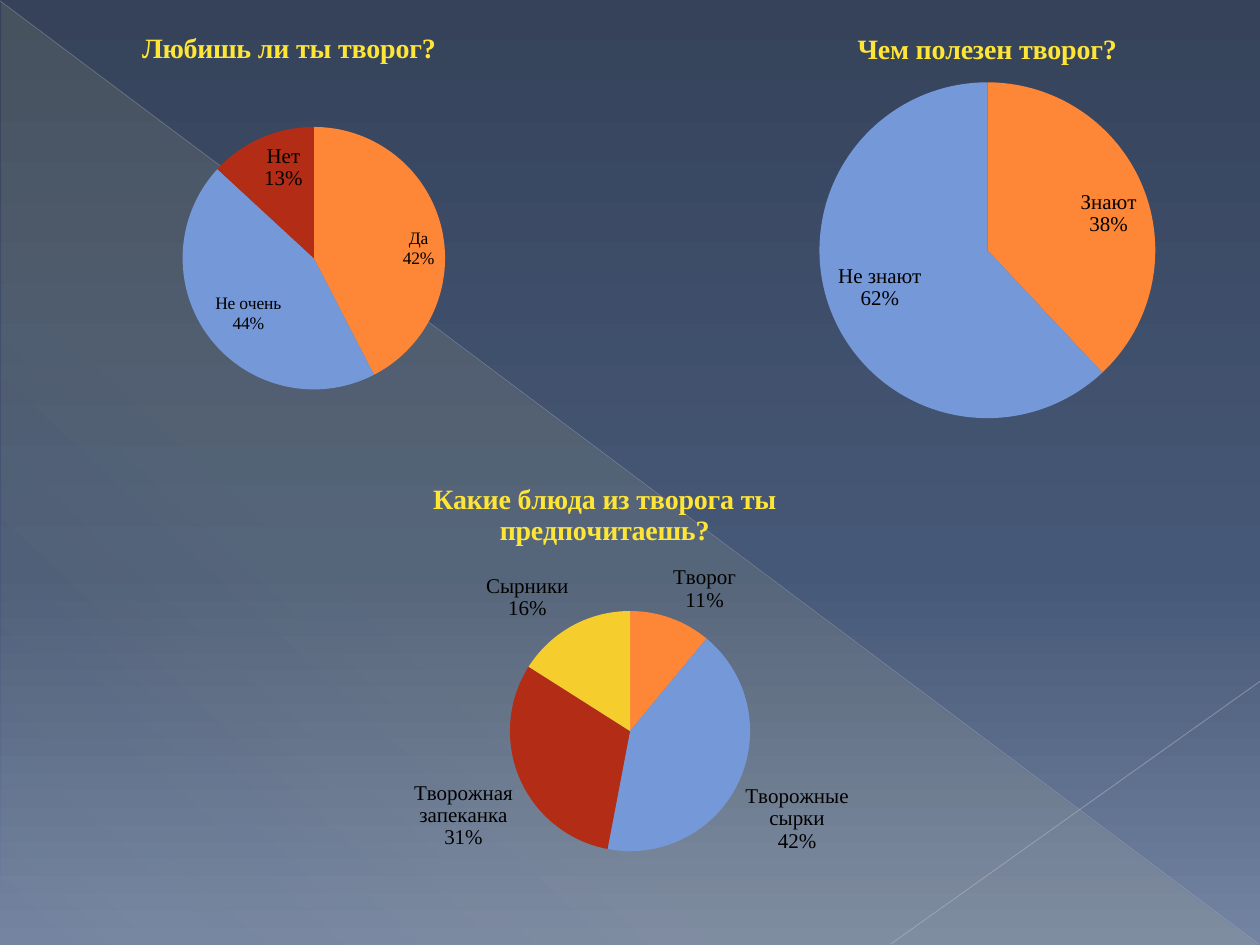
from lxml import etree
from pptx import Presentation
from pptx.chart.data import CategoryChartData
from pptx.dml.color import RGBColor
from pptx.enum.chart import XL_CHART_TYPE, XL_LABEL_POSITION
from pptx.enum.shapes import MSO_CONNECTOR, MSO_SHAPE
from pptx.oxml.ns import qn
from pptx.util import Inches, Pt

PIE = XL_CHART_TYPE.PIE
INSIDE = XL_LABEL_POSITION.INSIDE_END
OUTSIDE = XL_LABEL_POSITION.OUTSIDE_END
STRAIGHT = MSO_CONNECTOR.STRAIGHT
TRIANGLE = MSO_SHAPE.RIGHT_TRIANGLE

NIGHT = RGBColor(0x35, 0x42, 0x5A)
DUSK = RGBColor(0x46, 0x58, 0x77)
HAZE = RGBColor(0x73, 0x83, 0xA2)
GLOW = RGBColor(0xFF, 0xF3, 0x9D)
SILVER = RGBColor(0xBA, 0xBD, 0xC4)
PEARL = RGBColor(0xC1, 0xC4, 0xCA)
WHITE = RGBColor(0xFF, 0xFF, 0xFF)
BLACK = RGBColor(0, 0, 0)
LEMON = RGBColor(0xFF, 0xE6, 0x36)
ORANGE = RGBColor(0xFE, 0x86, 0x37)
BLUE = RGBColor(0x75, 0x98, 0xD9)
RED = RGBColor(0xB3, 0x2C, 0x16)
YELLOW = RGBColor(0xF5, 0xCD, 0x2D)
SLICES = (ORANGE, BLUE, RED, YELLOW)


def set_alpha(color_element, percent):
    etree.SubElement(color_element, qn("a:alpha"), val=str(percent * 1000))


def set_layout(parent, index, **values):
    for old in parent.findall(qn("c:layout")):
        parent.remove(old)
    layout = etree.Element(qn("c:layout"))
    manual = etree.SubElement(layout, qn("c:manualLayout"))
    if "w" in values:
        etree.SubElement(manual, qn("c:layoutTarget"), val="inner")
    for mode in ("xMode", "yMode"):
        etree.SubElement(manual, qn(f"c:{mode}"), val="edge")
    for name, value in values.items():
        etree.SubElement(manual, qn(f"c:{name}"), val=f"{value:.4f}")
    parent.insert(index, layout)


class PollPage:
    heading_font = "Times New Roman"
    base_font = "TeX Gyre Adventor"

    def __init__(self, deck):
        self.width, self.height = deck.slide_width, deck.slide_height
        self.page = deck.slides.add_slide(deck.slide_layouts[6])

    def place(self, x, y):
        return int(self.width * x / 100), int(self.height * y / 100)

    def gradient(self, fill, element, stops, angle):
        fill.gradient()
        fill.gradient_angle = 360 - angle
        stop_list = next(element.iter(qn("a:gsLst")))
        for old in list(stop_list):
            stop_list.remove(old)
        for position, color, alpha in stops:
            stop = etree.SubElement(stop_list, qn("a:gs"), pos=str(position * 1000))
            set_alpha(etree.SubElement(stop, qn("a:srgbClr"), val=str(color)), alpha)

    def background(self, stops, angle):
        self.gradient(self.page.background.fill, self.page.element, stops, angle)

    def triangle(self, x, y, width, height, stops, angle):
        shape = self.page.shapes.add_shape(
            TRIANGLE, *self.place(x, y), *self.place(width, height))
        shape.shadow.inherit = False
        shape.line.fill.background()
        self.gradient(shape.fill, shape.element, stops, angle)

    def line(self, start, end, color, weight, alpha):
        line = self.page.shapes.add_connector(
            STRAIGHT, *self.place(*start), *self.place(*end))
        line.line.color.rgb = color
        line.line.width = Pt(weight)
        properties = line.element.spPr
        set_alpha(next(properties.iter(qn("a:srgbClr"))), alpha)
        etree.SubElement(properties, qn("a:effectLst"))

    def style(self, font, name, size, color):
        font.name, font.size, font.color.rgb = name, Pt(size), color

    def pie(self, title, answers, frame, title_at, pie_at, pie_width,
            position, size, larger=None):
        data = CategoryChartData()
        data.categories = list(answers)
        data.add_series("Series 1", list(answers.values()))
        left, top, width, height = frame
        box = self.page.shapes.add_chart(
            PIE, *self.place(left, top), *self.place(width, height), data)
        chart = box.chart
        self.style(chart.font, self.base_font, 10, WHITE)
        chart.has_legend = False
        self.title(chart, title, title_at)
        plot = chart.plots[0]
        plot.vary_by_categories = True
        area = next(chart.element.iter(qn("c:plotArea")))
        set_layout(area, 0, x=pie_at[0], y=pie_at[1], w=pie_width,
                   h=pie_width * box.width / box.height)
        series = plot.series[0]
        for index, color in zip(range(len(answers)), SLICES):
            slice_format = series.points[index].format
            slice_format.fill.solid()
            slice_format.fill.fore_color.rgb = color
            slice_format.line.fill.background()
        self.labels(series, position, size, larger)

    def title(self, chart, text, at):
        chart.has_title = True
        para = chart.chart_title.text_frame.paragraphs[0]
        para.text = text
        self.style(para.font, self.heading_font, 16, LEMON)
        para.font.bold = True
        set_layout(next(chart.element.iter(qn("c:title"))), 1, x=at[0], y=at[1])

    def labels(self, series, position, size, larger):
        labels = series.data_labels
        labels.position = position
        self.style(labels.font, self.heading_font, size, BLACK)
        if larger is not None:
            label = series.points[larger].data_label
            self.style(label.font, self.heading_font, size + 2, BLACK)
            label.position = position
        flags = {"showVal": "0", "showCatName": "1", "showPercent": "1"}
        for holder in series._element.iter(qn("c:dLbls"), qn("c:dLbl")):
            for name, value in flags.items():
                holder.find(qn(f"c:{name}")).set("val", value)
            separator = etree.Element(qn("c:separator"))
            separator.text = "\n"
            holder.find(qn("c:showBubbleSize")).addnext(separator)


def main():
    deck = Presentation()
    deck.slide_width, deck.slide_height = Inches(10), Inches(7.5)
    poll = PollPage(deck)
    poll.background([(0, NIGHT, 100), (60, DUSK, 100), (100, HAZE, 100)], 90)
    poll.triangle(0.1, 0.2, 99.8, 99.8,
                  [(0, GLOW, 10), (70, GLOW, 8), (100, GLOW, 1)], 133)
    poll.line((0, 0.1), (99.9, 99.9), SILVER, 0.39, 35)
    poll.line((100, 72.1), (70.7, 99.9), PEARL, 0.47, 45)
    poll.pie("Любишь ли ты творог?", {"Да": 42, "Не очень": 44, "Нет": 13},
             (0, 0, 45.3, 44.8), (0.24, 0.06), (0.32, 0.3), 0.46,
             INSIDE, 10, larger=2)
    poll.pie("Чем полезен творог?", {"Знают": 38, "Не знают": 62},
             (56.3, 0, 43.7, 45.9), (0.26, 0.06), (0.2, 0.19), 0.61, INSIDE, 12)
    poll.pie("Какие блюда из творога ты предпочитаешь?",
             {"Творог": 11, "Творожные сырки": 42,
              "Творожная запеканка": 31, "Сырники": 16},
             (25.6, 47.9, 46.5, 49.3), (0.18, 0.05), (0.32, 0.34), 0.41,
             OUTSIDE, 12)
    deck.save("out.pptx")


if __name__ == "__main__":
    main()
